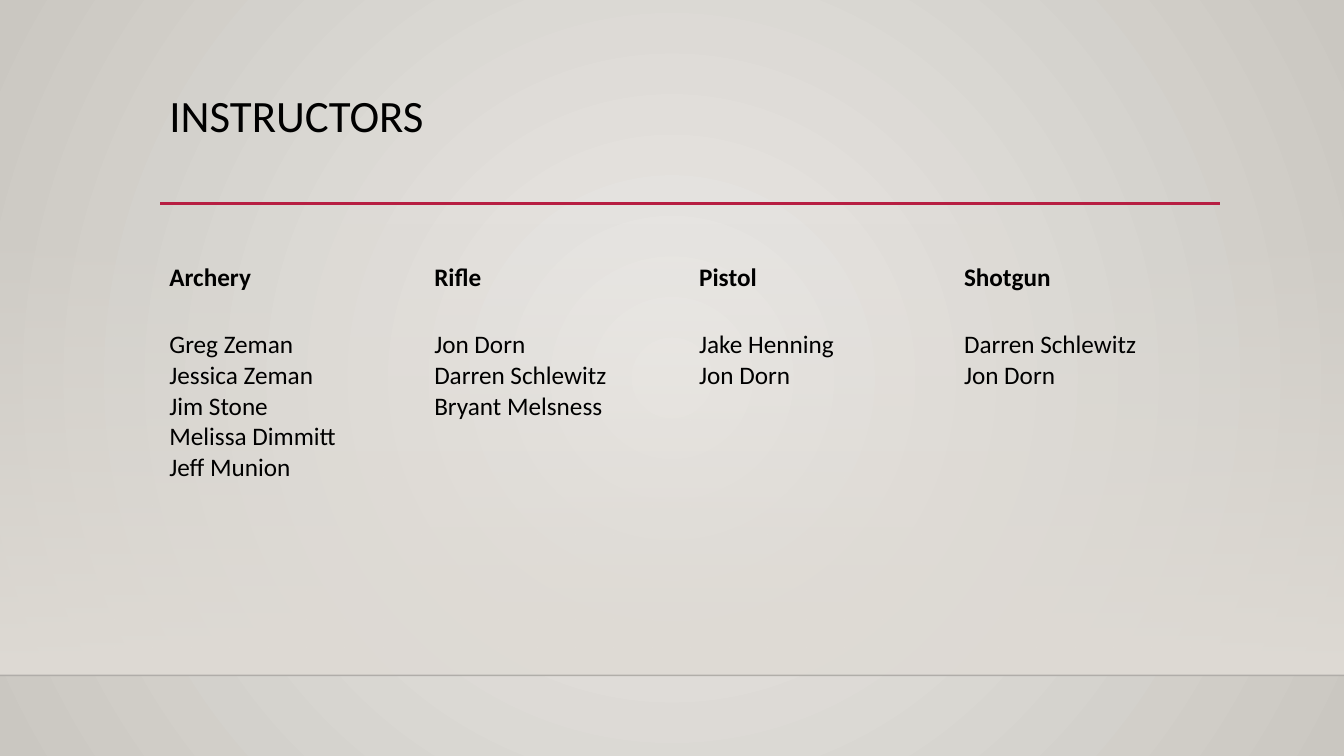
"""Build the instructors slide: a title above four columns of names."""
from lxml import etree
from pptx import Presentation
from pptx.dml.color import RGBColor
from pptx.enum.shapes import MSO_CONNECTOR as CONNECTOR, MSO_SHAPE as SHAPE
from pptx.enum.text import MSO_ANCHOR as ANCHOR, MSO_AUTO_SIZE as AUTO_SIZE, PP_ALIGN as ALIGN
from pptx.oxml.ns import qn
from pptx.util import Inches, Pt

COLORS = {
    "text": "000000",
    "accent": "B71E42",
    "floor_line": "000001",
    "glow": "ECEAE7",
    "edge": "CAC7C1",
    "haze": "DFDBD5",
}
INSTRUCTORS = {
    "Archery": ["Greg Zeman", "Jessica Zeman", "Jim Stone", "Melissa Dimmitt", "Jeff Munion"],
    "Rifle": ["Jon Dorn", "Darren Schlewitz", "Bryant Melsness"],
    "Pistol": ["Jake Henning", "Jon Dorn"],
    "Shotgun": ["Darren Schlewitz", "Jon Dorn"],
}
WIDTH, HEIGHT = Inches(13.33), Inches(7.5)
LEFT, CONTENT_WIDTH = Inches(1.58), Inches(10.51)
FLOOR = Inches(6.7)


def write(text_frame, text, size=18, bold=False, spacing=None):
    """Write each line of the text as a left-aligned paragraph."""
    text_frame.text = text
    for paragraph in text_frame.paragraphs:
        paragraph.alignment = ALIGN.LEFT
        paragraph.line_spacing = spacing
        for run in paragraph.runs:
            run.font.name = "Calibri"
            run.font.size = Pt(size)
            run.font.bold = bold
            run.font.color.rgb = RGBColor.from_string(COLORS["text"])


def set_alpha(parent, percent):
    """Make the first colour inside the parent partly transparent."""
    color = next(parent.iter(qn("a:srgbClr")))
    etree.SubElement(color, qn("a:alpha"), val=str(percent * 1000))


presentation = Presentation()
presentation.slide_width, presentation.slide_height = WIDTH, HEIGHT
slide = presentation.slides.add_slide(presentation.slide_layouts[5])
shapes = slide.shapes

background = slide.background.fill
background.gradient()
for stop, name in zip(background.gradient_stops, ("glow", "edge")):
    stop.color.rgb = RGBColor.from_string(COLORS[name])
gradient = next(slide.element.iter(qn("a:gradFill")))
gradient.remove(gradient.find(qn("a:lin")))
circle = etree.SubElement(gradient, qn("a:path"), path="circle")
etree.SubElement(circle, qn("a:fillToRect"), l="50000", t="50000", r="50000", b="50000")

haze_top = Inches(2.21)
haze = shapes.add_shape(SHAPE.RECTANGLE, 0, haze_top, WIDTH, FLOOR - haze_top)
haze.shadow.inherit = False
haze.line.fill.background()
haze.fill.gradient()
haze.fill.gradient_angle = 270
for stop in haze.fill.gradient_stops:
    stop.color.rgb = RGBColor.from_string(COLORS["haze"])
set_alpha(haze.element, 0)

for start, end, top, name, weight, opacity in (
    (0, WIDTH, FLOOR, "floor_line", 1, 20),
    (Inches(1.59), Inches(12.1), Inches(2.02), "accent", 2.5, 100),
):
    rule = shapes.add_connector(CONNECTOR.STRAIGHT, start, top, end, top)
    rule.line.color.rgb = RGBColor.from_string(COLORS[name])
    rule.line.width = Pt(weight)
    set_alpha(rule.element, opacity)
    etree.SubElement(rule.element.spPr, qn("a:effectLst"))

title = shapes.title
title.left, title.top, title.width, title.height = LEFT, Inches(0.88), CONTENT_WIDTH, Inches(1.16)
title.text_frame.auto_size = AUTO_SIZE.NONE
title.text_frame.vertical_anchor = ANCHOR.TOP
write(title.text_frame, "INSTRUCTORS", size=32, spacing=0.9)
shapes.element.append(title.element)

frame = shapes.add_table(2, len(INSTRUCTORS), LEFT, Inches(2.55), CONTENT_WIDTH, Inches(2.27))
table = frame.table
table.first_row = table.horz_banding = False
style = next(frame.element.iter(qn("a:tableStyleId")))
style.text = "{2D5ABB26-0587-4C30-8999-92F81FD0307C}"
table.rows[0].height, table.rows[1].height = Inches(0.67), Inches(1.6)
for column, (discipline, names) in enumerate(INSTRUCTORS.items()):
    for row, text in enumerate((discipline, "\n".join(names))):
        cell = table.cell(row, column)
        cell.fill.background()
        write(cell.text_frame, text, bold=row == 0)

presentation.save("out.pptx")
